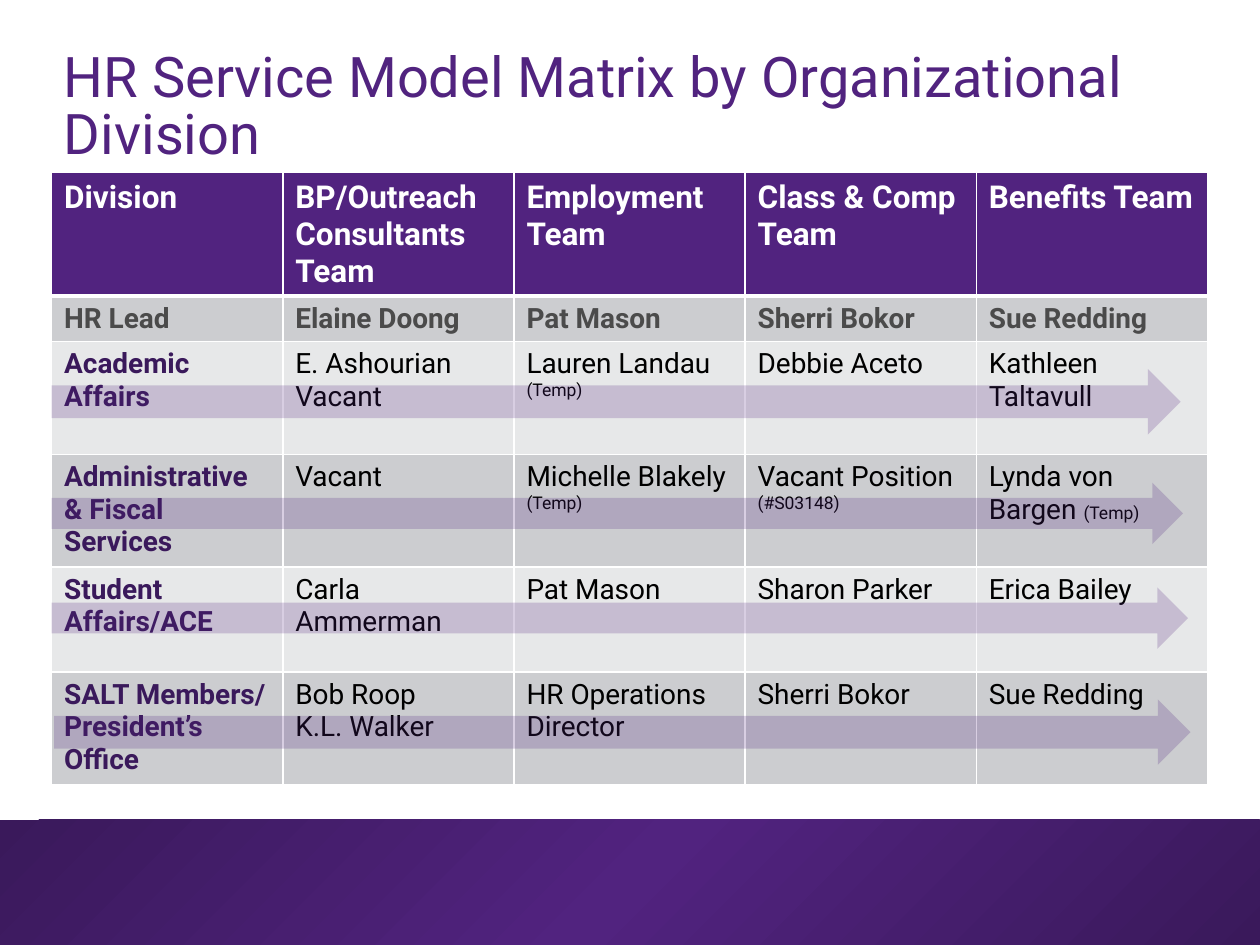
from copy import deepcopy

from lxml.etree import SubElement
from pptx import Presentation
from pptx.dml.color import RGBColor
from pptx.enum.shapes import MSO_SHAPE as Shape
from pptx.enum.text import MSO_ANCHOR as Anchor
from pptx.oxml.ns import qn
from pptx.util import Cm, Pt

PURPLE = RGBColor(0x51, 0x23, 0x7F)
DARK_PURPLE = RGBColor(0x3A, 0x19, 0x5B)
WHITE = RGBColor(0xFF, 0xFF, 0xFF)
BLACK = RGBColor(0, 0, 0)
GRAY = RGBColor(0x4B, 0x4B, 0x4B)
MID_GRAY = RGBColor(0xCC, 0xCD, 0xD0)
LIGHT_GRAY = RGBColor(0xE7, 0xE8, 0xE9)

TITLE = {"size": Pt(32), "bold": False, "color": PURPLE}
HEADER = {"size": Pt(18), "bold": True, "color": WHITE}
LEAD = {"size": Pt(16), "bold": True, "color": GRAY}
DIVISION = {"size": Pt(16), "bold": True, "color": DARK_PURPLE}
PERSON = {"size": Pt(16), "bold": False, "color": BLACK}
NOTE = {"size": Pt(10), "bold": False, "color": BLACK}

# A new line starts a paragraph; text in parentheses is set as a small note
MATRIX = [
    ["Division", "BP/Outreach Consultants Team", "Employment Team",
     "Class & Comp Team", "Benefits Team"],
    ["HR Lead", "Elaine Doong", "Pat Mason", "Sherri Bokor", "Sue Redding"],
    ["Academic Affairs", "E. Ashourian\nVacant", "Lauren Landau\n(Temp)",
     "Debbie Aceto", "Kathleen Taltavull"],
    ["Administrative & Fiscal Services", "Vacant", "Michelle Blakely\n(Temp)",
     "Vacant Position\n(#S03148)", "Lynda von Bargen (Temp)"],
    ["Student Affairs/ACE", "Carla Ammerman", "Pat Mason", "Sharon Parker",
     "Erica Bailey"],
    ["SALT Members/ President’s Office", "Bob Roop\nK.L. Walker",
     "HR Operations Director", "Sherri Bokor", "Sue Redding"],
]
ROW_HEIGHTS = [2.48, 0.91, 2.28, 2.27, 2.12, 2.27]
COLUMN_WIDTH = 4.66

# left, top, width, height
ARROWS = [
    (1.04, 7.44, 22.76, 1.32),
    (1.04, 9.73, 22.81, 1.24),
    (1.04, 11.84, 22.91, 1.24),
    (1.09, 14.1, 22.91, 1.32),
]


class MatrixSlide:
    font_name = "Roboto"

    def __init__(self, page):
        self.page = page

    def add_span(self, para, text, style):
        span = para.add_run()
        span.text = text
        span.font.name = self.font_name
        for name, value in style.items():
            if name == "color":
                span.font.color.rgb = value
            else:
                setattr(span.font, name, value)

    def add_title(self, text, place):
        box = self.page.shapes.add_textbox(*map(Cm, place))
        frame = box.text_frame
        frame.word_wrap = True
        frame.vertical_anchor = Anchor.BOTTOM
        para = frame.paragraphs[0]
        para.line_spacing = 0.85
        self.add_span(para, text, TITLE)

    def add_block(self, kind, place):
        block = self.page.shapes.add_shape(kind, *map(Cm, place))
        block.shadow.inherit = False
        block.line.fill.background()
        return block

    def add_gradient_band(self, place):
        fill = self.add_block(Shape.RECTANGLE, place).fill
        fill.gradient()
        fill.gradient_angle = 315
        stop_list = fill._xPr.find(qn("a:gradFill")).find(qn("a:gsLst"))
        stop_list.append(deepcopy(stop_list[-1]))
        colors = (DARK_PURPLE, PURPLE, DARK_PURPLE)
        for index, (stop, color) in enumerate(zip(fill.gradient_stops, colors)):
            stop.position = index / 2
            stop.color.rgb = color

    def add_arrow(self, place):
        arrow = self.add_block(Shape.RIGHT_ARROW, place)
        arrow.fill.solid()
        arrow.fill.fore_color.rgb = PURPLE
        color = arrow.fill._xPr.find(qn("a:solidFill"))[0]
        SubElement(color, qn("a:alpha"), val="22000")

    def set_borders(self, cell, bottom):
        props = cell._tc.get_or_add_tcPr()
        sides = {"lnL": 1, "lnR": 1, "lnT": 1, "lnB": bottom}
        for index, (side, width) in enumerate(sides.items()):
            line = SubElement(props, qn(f"a:{side}"), w=str(Pt(width)))
            fill = SubElement(line, qn("a:solidFill"))
            SubElement(fill, qn("a:srgbClr"), val=str(WHITE))
            props.insert(index, line)

    def fill_cell(self, cell, text, style, color, bottom):
        cell.fill.solid()
        cell.fill.fore_color.rgb = color
        self.set_borders(cell, bottom)
        frame = cell.text_frame
        for index, line in enumerate(text.split("\n")):
            para = frame.add_paragraph() if index else frame.paragraphs[0]
            main, mark, note = line.partition("(")
            if main:
                self.add_span(para, main, style)
            if mark:
                self.add_span(para, mark + note, NOTE)

    def add_matrix(self, left, top):
        columns = len(MATRIX[0])
        table = self.page.shapes.add_table(
            len(MATRIX), columns, Cm(left), Cm(top),
            Cm(COLUMN_WIDTH * columns), Cm(sum(ROW_HEIGHTS))).table
        table.horz_banding = False
        for column in table.columns:
            column.width = Cm(COLUMN_WIDTH)
        for r, texts in enumerate(MATRIX):
            table.rows[r].height = Cm(ROW_HEIGHTS[r])
            color = PURPLE if r == 0 else MID_GRAY if r % 2 else LIGHT_GRAY
            for c, text in enumerate(texts):
                if r < 2:
                    style = (HEADER, LEAD)[r]
                else:
                    style = PERSON if c else DIVISION
                self.fill_cell(table.cell(r, c), text, style, color,
                               bottom=1 if r else 3)


def main():
    deck = Presentation()
    deck.slide_width, deck.slide_height = Cm(25.4), Cm(19.05)
    slide = MatrixSlide(deck.slides.add_slide(deck.slide_layouts[6]))

    # Footer band
    slide.add_gradient_band((0, 16.53, 25.4, 2.52))

    # Matrix and title
    slide.add_matrix(1.04, 3.48)
    slide.add_title("HR Service Model Matrix by Organizational Division",
                    (1.04, 0.89, 23.3, 2.59))

    # One arrow across each division
    for place in ARROWS:
        slide.add_arrow(place)

    deck.save("out.pptx")


if __name__ == "__main__":
    main()
